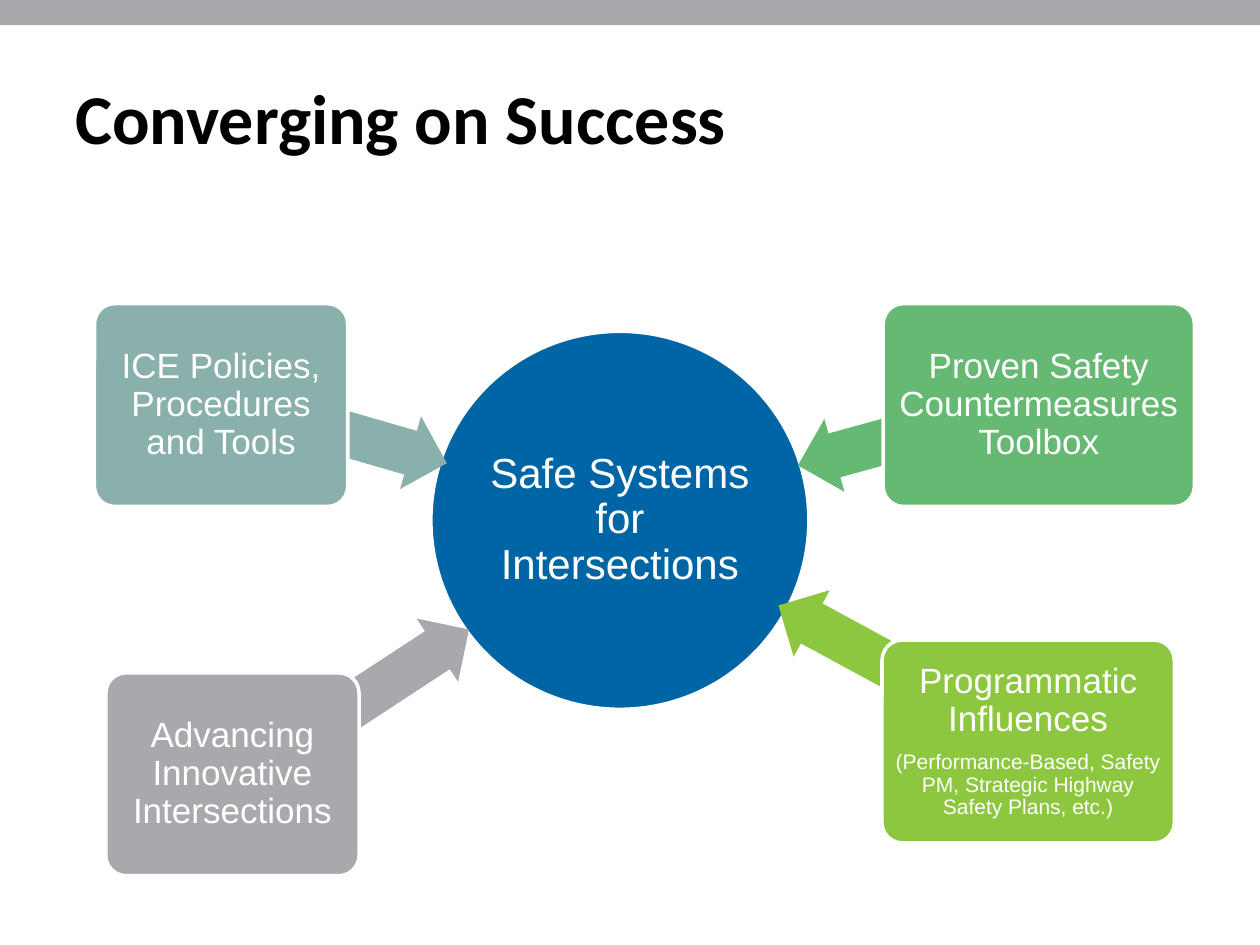
from dataclasses import dataclass

from pptx import Presentation
from pptx.dml.color import RGBColor
from pptx.enum.shapes import MSO_SHAPE
from pptx.enum.text import MSO_ANCHOR, PP_ALIGN
from pptx.util import Inches, Pt

RECTANGLE = MSO_SHAPE.RECTANGLE
ELLIPSE = MSO_SHAPE.OVAL
ROUNDED = MSO_SHAPE.ROUNDED_RECTANGLE
LEFT_ARROW = MSO_SHAPE.LEFT_ARROW
MIDDLE = MSO_ANCHOR.MIDDLE
LEFT = PP_ALIGN.LEFT
CENTER = PP_ALIGN.CENTER

WHITE = RGBColor(0xFF, 0xFF, 0xFF)
BLACK = RGBColor(0x00, 0x00, 0x00)
GRAY = RGBColor(0xA7, 0xA9, 0xAC)
BLUE = RGBColor(0x00, 0x65, 0xA4)
TEAL = RGBColor(0x89, 0xB0, 0xAB)
GREEN = RGBColor(0x66, 0xB9, 0x72)
LIME = RGBColor(0x8D, 0xC6, 0x3F)

FACTOR_HEIGHT = 1.61
ARROW_HEIGHT = 0.6


@dataclass(frozen=True)
class Factor:
    """A box that feeds the hub, with its arrow."""
    paragraphs: tuple
    color: RGBColor
    left: float
    top: float
    width: float
    arrow_left: float
    arrow_top: float
    arrow_width: float
    rotation: float


FACTORS = (
    Factor((("Advancing Innovative Intersections", 20),), GRAY,
           0.84, 5.34, 2.01, 1.83, 5.26, 2.06, 146.8),
    Factor((("ICE Policies, Procedures and Tools", 20),), TEAL,
           0.75, 2.41, 2.01, 1.88, 3.14, 1.7, 196.1),
    Factor((("Proven Safety Countermeasures Toolbox", 20),), GREEN,
           7.01, 2.41, 2.47, 6.3, 3.15, 1.84, 344.6),
    Factor((("Programmatic Influences", 20),
            ("(Performance-Based, Safety PM, Strategic Highway Safety Plans, etc.)", 12)), LIME,
           7, 5.08, 2.32, 6.03, 5.09, 2.45, 28.5),
)


def add_block(slide, kind, left: float, top: float, width: float, height: float,
              color: RGBColor, outlined: bool = False):
    """Add a flat filled shape, with a white outline if asked."""
    block = slide.shapes.add_shape(kind, Inches(left), Inches(top), Inches(width), Inches(height))
    block.shadow.inherit = False
    block.fill.solid()
    block.fill.fore_color.rgb = color
    if outlined:
        block.line.color.rgb = WHITE
        block.line.width = Pt(2)
    else:
        block.line.fill.background()
    return block


def write_text(holder, paragraphs: tuple, *, font: str = "Arial", color: RGBColor = WHITE,
               bold: bool = False, align=CENTER, inset: float = 0.04,
               line_spacing: float = 0.9, after: float = 0.35) -> None:
    """Write (text, size) paragraphs, spaced by a share of their size."""
    frame = holder.text_frame
    frame.word_wrap = True
    frame.vertical_anchor = MIDDLE
    frame.margin_left = frame.margin_right = Inches(inset)
    frame.margin_top = frame.margin_bottom = Inches(inset)
    for index, (text, size) in enumerate(paragraphs):
        paragraph = frame.add_paragraph() if index else frame.paragraphs[0]
        paragraph.alignment = align
        paragraph.line_spacing = line_spacing
        paragraph.space_after = Pt(size * after)
        run = paragraph.add_run()
        run.text = text
        run.font.name = font
        run.font.size = Pt(size)
        run.font.bold = bold
        run.font.color.rgb = color


def add_factor(slide, factor: Factor) -> None:
    """Draw the arrow of a factor and then its box."""
    arrow = add_block(slide, LEFT_ARROW, factor.arrow_left, factor.arrow_top,
                      factor.arrow_width, ARROW_HEIGHT, factor.color)
    arrow.adjustments[0] = 0.6
    arrow.adjustments[1] = 0.5
    arrow.rotation = factor.rotation
    box = add_block(slide, ROUNDED, factor.left, factor.top, factor.width,
                    FACTOR_HEIGHT, factor.color, outlined=True)
    box.adjustments[0] = 0.1
    write_text(box, factor.paragraphs)


def main() -> None:
    """Build the slide and save it."""
    deck = Presentation()
    deck.slide_width = Inches(10)
    deck.slide_height = Inches(7.5)
    slide = deck.slides.add_slide(deck.slide_layouts[6])

    add_block(slide, RECTANGLE, 0, 0, 10, 0.2, GRAY)
    title = slide.shapes.add_textbox(Inches(0.5), Inches(0.3), Inches(9), Inches(1.25))
    write_text(title, (("Converging on Success", 40),), font="Calibri", color=BLACK,
               bold=True, align=LEFT, inset=0.1, line_spacing=1.0, after=0)

    hub = add_block(slide, ELLIPSE, 3.42, 2.63, 3, 3, BLUE, outlined=True)
    write_text(hub, (("Safe Systems for Intersections", 24),), inset=0.02)
    for factor in FACTORS:
        add_factor(slide, factor)

    deck.save("out.pptx")


if __name__ == "__main__":
    main()
